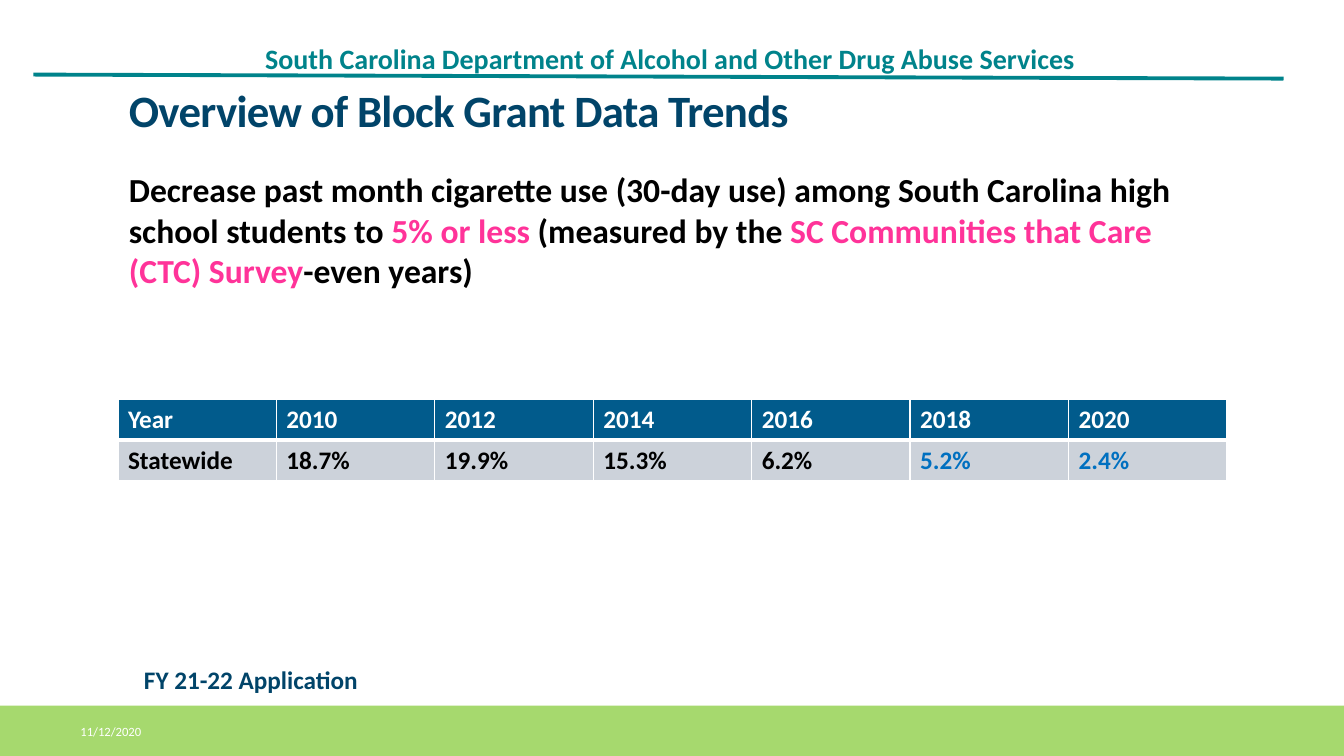
"""Builds the slide on block grant data trends for past month cigarette use."""
from dataclasses import dataclass

from lxml.etree import SubElement
from pptx import Presentation
from pptx.dml.color import RGBColor
from pptx.enum.shapes import MSO_CONNECTOR as Connector, MSO_SHAPE as Shape
from pptx.enum.text import MSO_ANCHOR as Anchor
from pptx.oxml.ns import qn
from pptx.util import Inches, Pt

FONT = "Calibri"
TEAL, NAVY, BLUE, HEADER_BLUE = "00838B", "014469", "0070C0", "015B8C"
PINK, GREEN, GREY, WHITE, BLACK = "FF3399", "A6D96E", "CCD2DA", "FFFFFF", "000000"
YEARS = ["Year", "2010", "2012", "2014", "2016", "2018", "2020"]
RATES = ["Statewide", "18.7%", "19.9%", "15.3%", "6.2%", "5.2%", "2.4%"]
RECENT_YEARS = ("2018", "2020")


@dataclass
class Span:
    text: str
    color: str


@dataclass
class Label:
    left: float
    top: float
    width: float
    height: float
    spans: list[Span]
    size: float
    bold: bool = True
    anchor: Anchor = Anchor.TOP
    wrap: bool = True
    line_spacing: float = 1.0
    tracking: int = 0
    margins: tuple[float, float] = (0.1, 0.05)


LABELS = [
    Label(2.56, 0.28, 10.21, 0.63,
          [Span("South Carolina Department of Alcohol and Other Drug Abuse Services", TEAL)],
          20, anchor=Anchor.MIDDLE, line_spacing=0.9, margins=(0.07, 0.04)),
    Label(0.7, 7.06, 2.7, 0.4, [Span("11/12/2020", WHITE)], 9, bold=False, anchor=Anchor.MIDDLE),
    Label(1.18, 0.85, 11, 0.67, [Span("Overview of Block Grant Data Trends", NAVY)],
          32, line_spacing=0.85, tracking=-50),
    Label(1.33, 6.54, 2.34, 0.4, [Span("FY 21-22 Application", NAVY)], 18, wrap=False),
    Label(1.18, 1.63, 11, 1.48, [
        Span("Decrease past month cigarette use (30-day use) among South Carolina "
             "high school students to ", BLACK),
        Span("5% or less ", PINK),
        Span("(measured by the ", BLACK),
        Span("SC Communities that Care (CTC) Survey", PINK),
        Span("-even years)", BLACK),
    ], 24),
]


def rgb(color: str) -> RGBColor:
    return RGBColor.from_string(color)


def add_text(para, text: str, *, color: str, size: float, bold: bool = True,
             tracking: int = 0) -> None:
    span = para.add_run()
    span.text = text
    span.font.name = FONT
    span.font.size = Pt(size)
    span.font.bold = bold
    span.font.color.rgb = rgb(color)
    if tracking:
        span.font._element.set("spc", str(tracking))


def add_label(page, label: Label) -> None:
    box = page.shapes.add_textbox(Inches(label.left), Inches(label.top),
                                  Inches(label.width), Inches(label.height))
    frame = box.text_frame
    frame.word_wrap = label.wrap
    frame.vertical_anchor = label.anchor
    frame.margin_left = frame.margin_right = Inches(label.margins[0])
    frame.margin_top = frame.margin_bottom = Inches(label.margins[1])
    para = frame.paragraphs[0]
    para.line_spacing = label.line_spacing
    for span in label.spans:
        add_text(para, span.text, color=span.color, size=label.size,
                 bold=label.bold, tracking=label.tracking)


def add_header_rule(page) -> None:
    rule = page.shapes.add_connector(Connector.STRAIGHT, Inches(0.33), Inches(0.74),
                                     Inches(12.73), Inches(0.78))
    rule.line.color.rgb = rgb(TEAL)
    rule.line.width = Pt(2.75)
    SubElement(rule._element.spPr, qn("a:effectLst"))


def add_footer_band(page) -> None:
    band = page.shapes.add_shape(Shape.RECTANGLE, 0, Inches(7), Inches(13.33), Inches(0.5))
    band.shadow.inherit = False
    band.fill.solid()
    band.fill.fore_color.rgb = rgb(GREEN)
    band.line.fill.background()


def set_borders(cell, **widths: float) -> None:
    properties = cell._tc.get_or_add_tcPr()
    for position, (side, width) in enumerate(widths.items()):
        border = properties.makeelement(qn(f"a:ln{side}"), {"w": str(Pt(width))})
        fill = SubElement(border, qn("a:solidFill"))
        SubElement(fill, qn("a:srgbClr"), val=WHITE)
        properties.insert(position, border)


def add_rate_table(page) -> None:
    table = page.shapes.add_table(2, len(YEARS), Inches(1.17), Inches(3.96),
                                  Inches(11), Inches(0.81)).table
    for column, (year, rate) in enumerate(zip(YEARS, RATES)):
        rate_color = BLUE if year in RECENT_YEARS else BLACK
        entries = [(year, WHITE, HEADER_BLUE, 3), (rate, rate_color, GREY, 1)]
        for row, (text, color, fill, bottom) in enumerate(entries):
            cell = table.cell(row, column)
            cell.fill.solid()
            cell.fill.fore_color.rgb = rgb(fill)
            set_borders(cell, L=1, R=1, T=1 if row == 0 else 3, B=bottom)
            add_text(cell.text_frame.paragraphs[0], text, color=color, size=18)


def main() -> None:
    deck = Presentation()
    deck.slide_width, deck.slide_height = Inches(13.33), Inches(7.5)
    page = deck.slides.add_slide(deck.slide_layouts[6])
    add_header_rule(page)
    add_footer_band(page)
    add_rate_table(page)
    for label in LABELS:
        add_label(page, label)
    deck.save("out.pptx")


if __name__ == "__main__":
    main()
